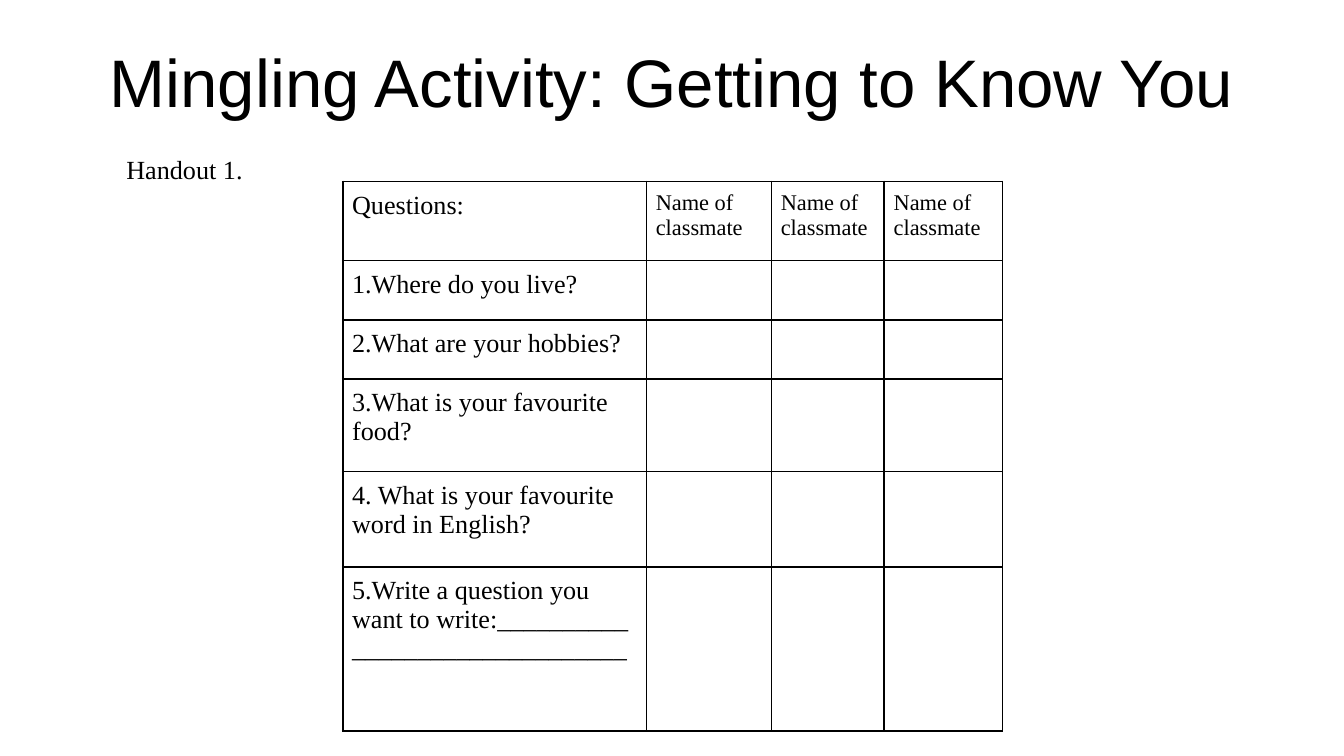
from lxml.etree import SubElement
from pptx import Presentation
from pptx.dml.color import RGBColor
from pptx.enum.text import MSO_ANCHOR, PP_ALIGN
from pptx.oxml.ns import qn
from pptx.util import Inches, Pt

BLACK = RGBColor(0, 0, 0)
SERIF = "Times New Roman"

TITLE = "Mingling Activity: Getting to Know You"
HANDOUT = "Handout 1."
HEADINGS = ["Questions:"] + ["Name of classmate"] * 3
QUESTIONS = [
    "1.Where do you live?",
    "2.What are your hobbies?",
    "3.What is your favourite food?",
    "4. What is your favourite word in English?",
    "5.Write a question you want to write:__________  _____________________",
]
COLUMN_WIDTHS = [2.26, 0.93, 0.84, 0.88]
ROW_HEIGHTS = [0.59, 0.44, 0.44, 0.69, 0.71, 1.22]


def place(shape, left, top, width, height):
    shape.left, shape.top = Inches(left), Inches(top)
    shape.width, shape.height = Inches(width), Inches(height)


def style(paragraph, size, face=SERIF):
    paragraph.font.size = Pt(size)
    paragraph.font.name = face
    paragraph.font.color.rgb = BLACK


def add_borders(cell):
    properties = cell._tc.get_or_add_tcPr()
    for side in ("a:lnL", "a:lnR", "a:lnT", "a:lnB"):
        line = SubElement(properties, qn(side), w=str(Pt(1)))
        fill = SubElement(line, qn("a:solidFill"))
        SubElement(fill, qn("a:srgbClr"), val=str(BLACK))
    SubElement(properties, qn("a:noFill"))


prs = Presentation()
prs.slide_width = Inches(10)
prs.slide_height = prs.slide_width * 9 // 16
slide = prs.slides.add_slide(prs.slide_layouts[5])

title = slide.shapes.title
place(title, 0.34, 0.2, 9.32, 0.91)
title.text_frame.text = TITLE
title.text_frame.vertical_anchor = MSO_ANCHOR.TOP
title.text_frame.margin_top = Inches(0.1)
title.text_frame.paragraphs[0].alignment = PP_ALIGN.CENTER
style(title.text_frame.paragraphs[0], 36, "Arial")

rows = [HEADINGS] + [[question, "", "", ""] for question in QUESTIONS]
survey = slide.shapes.add_table(
    len(rows), len(HEADINGS), Inches(2.55), Inches(1.35),
    Inches(sum(COLUMN_WIDTHS)), Inches(sum(ROW_HEIGHTS))).table
survey.first_row = survey.horz_banding = False
for column, width in zip(survey.columns, COLUMN_WIDTHS):
    column.width = Inches(width)
for row, height, texts in zip(survey.rows, ROW_HEIGHTS, rows):
    row.height = Inches(height)
    for index, (cell, text) in enumerate(zip(row.cells, texts)):
        cell.text = text
        cell.margin_left = cell.margin_right = Inches(0.07)
        cell.margin_top = cell.margin_bottom = Inches(0.07)
        style(cell.text_frame.paragraphs[0], 14 if index == 0 else 12)
        add_borders(cell)

handout = slide.shapes.add_textbox(
    Inches(0.34), Inches(1.11), Inches(1.83), Inches(0.54)).text_frame
handout.word_wrap = True
handout.margin_left, handout.margin_top = Inches(0.6), 0
handout.text = HANDOUT
handout.paragraphs[0].line_spacing = 1.15
style(handout.paragraphs[0], 14)

prs.save("out.pptx")
